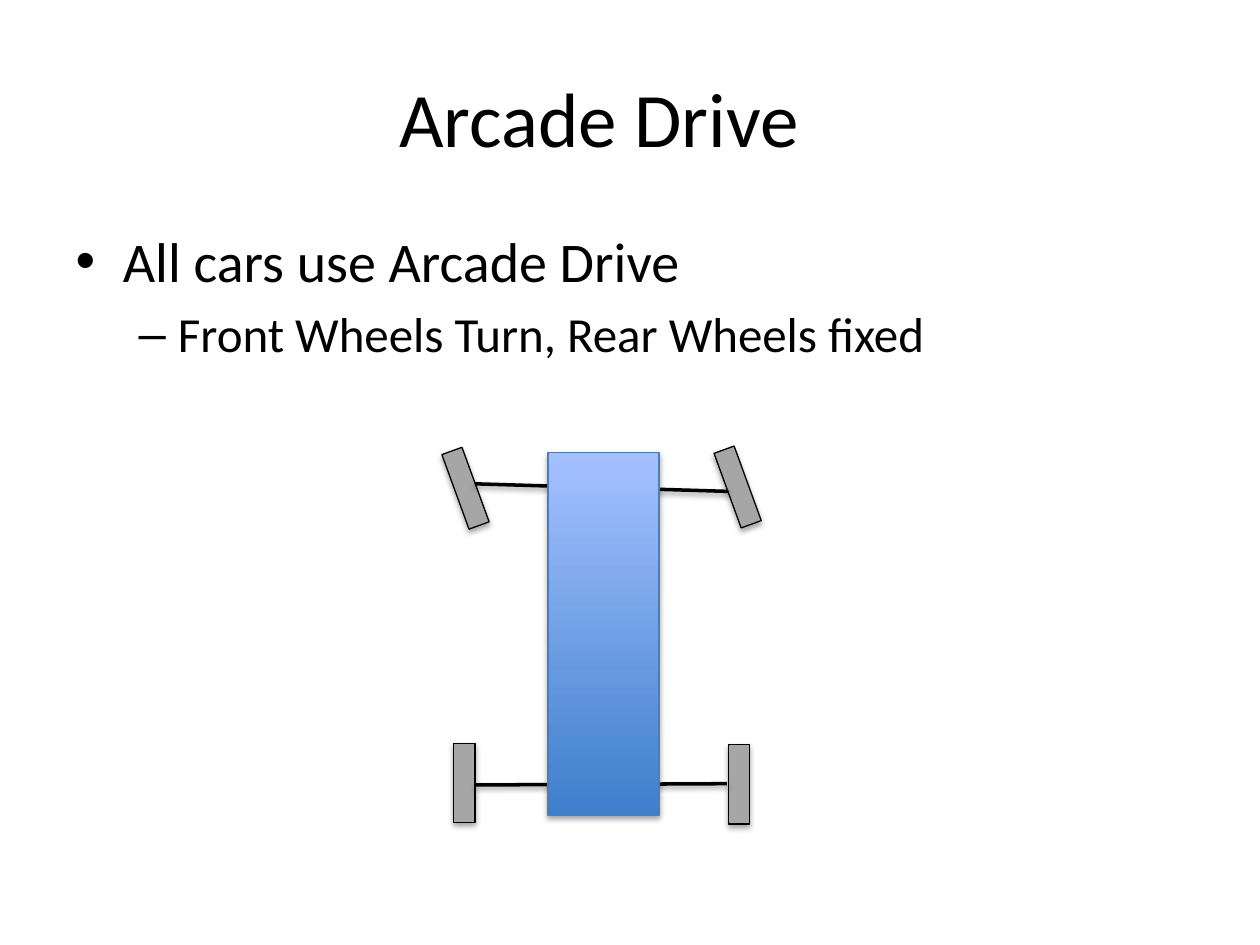
import pptx
import pptx.util
import pptx.dml.color
import pptx.enum.shapes
import pptx.enum.text

Inches = pptx.util.Inches
Pt = pptx.util.Pt
BLACK = pptx.dml.color.RGBColor(0x00, 0x00, 0x00)
GREY = pptx.dml.color.RGBColor(0xA6, 0xA6, 0xA6)
RECT = pptx.enum.shapes.MSO_SHAPE.RECTANGLE
LINE = pptx.enum.shapes.MSO_CONNECTOR.STRAIGHT

deck = pptx.Presentation()
deck.slide_width = Inches(10)
deck.slide_height = Inches(7.5)
slide = deck.slides.add_slide(deck.slide_layouts[1])
shapes = slide.shapes

title = shapes.title
title.left, title.top = Inches(1.91), Inches(0.3)
title.width, title.height = Inches(5.69), Inches(1.25)
title.text_frame.text = "Arcade Drive"
head = title.text_frame.paragraphs[0]
head.alignment = pptx.enum.text.PP_ALIGN.CENTER
head.font.size = Pt(44)
head.font.name = "Calibri"
head.font.color.rgb = BLACK

body = slide.placeholders[1]
body.left, body.top = Inches(0.5), Inches(1.75)
body.width, body.height = Inches(9), Inches(4.95)
frame = body.text_frame
frame.text = "All cars use Arcade Drive\nFront Wheels Turn, Rear Wheels fixed"
for level, (para, size) in enumerate(zip(frame.paragraphs, (32, 28))):
    para.level = level
    para.font.size = Pt(size)
    para.font.name = "Calibri"
    para.font.color.rgb = BLACK

wheels = []
for left, top, turn in (
    (3.61, 3.56, 340),
    (5.77, 3.55, 340),
    (3.6, 5.9, 0),
    (5.78, 5.91, 0),
):
    wheel = shapes.add_shape(RECT, Inches(left), Inches(top), Inches(0.17), Inches(0.63))
    wheel.rotation = turn
    wheel.fill.solid()
    wheel.fill.fore_color.rgb = GREY
    wheel.line.color.rgb = BLACK
    wheel.line.width = Pt(0.75)
    wheels.append(wheel)

for pair, ends in (
    (wheels[:2], (3.77, 3.84, 5.78, 3.9)),
    (wheels[2:], (3.77, 6.23, 5.77, 6.22)),
):
    axle = shapes.add_connector(LINE, 0, 0, 0, 0)
    axle.begin_connect(pair[0], 3)
    axle.end_connect(pair[1], 1)
    axle.begin_x, axle.begin_y, axle.end_x, axle.end_y = map(Inches, ends)
    axle.line.color.rgb = BLACK
    axle.line.width = Pt(2)

car = shapes.add_shape(RECT, Inches(4.35), Inches(3.59), Inches(0.88), Inches(2.88))
car.line.width = Pt(0.75)

deck.save("out.pptx")
